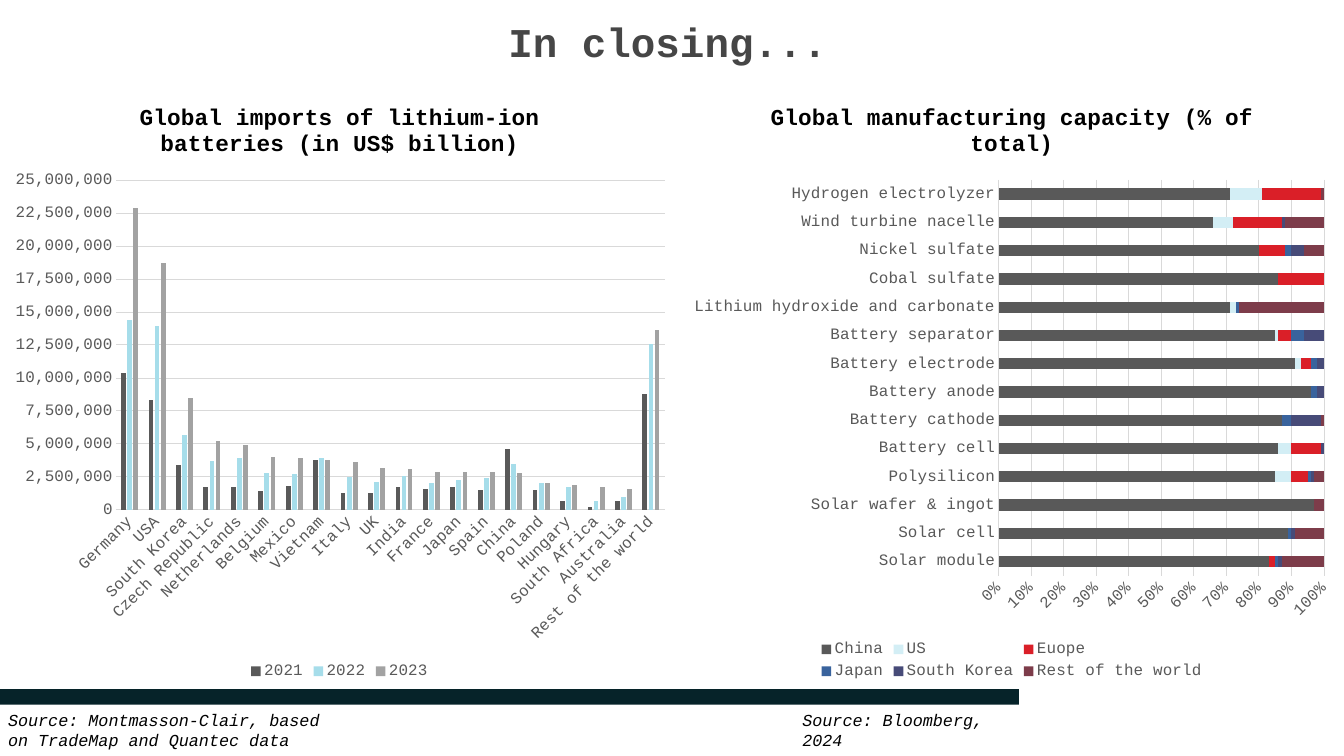
from lxml import etree
from pptx import Presentation, util as u
from pptx.chart.data import CategoryChartData
from pptx.dml.color import RGBColor
from pptx.enum import chart as ch, shapes, text
from pptx.oxml.ns import qn

IMPORT_COUNTRIES = [
    "Germany", "USA", "South Korea", "Czech Republic", "Netherlands", "Belgium",
    "Mexico", "Vietnam", "Italy", "UK", "India", "France", "Japan", "Spain", "China",
    "Poland", "Hungary", "South Africa", "Australia", "Rest of the world"]
# Imports in units of 100,000
IMPORTS = {
    "2021": ("595959", [104, 83, 34, 17, 17, 14, 18, 38, 13, 13,
                        17, 16, 17, 15, 46, 15, 7, 2, 7, 88]),
    "2022": ("A6DDEA", [144, 139, 57, 37, 39, 28, 27, 39, 25, 21,
                        26, 20, 23, 24, 35, 20, 17, 7, 10, 126]),
    "2023": ("A2A2A2", [229, 187, 85, 52, 49, 40, 39, 38, 36, 32,
                        31, 29, 29, 29, 28, 20, 19, 17, 16, 136]),
}
PRODUCTS = [
    "Solar module", "Solar cell", "Solar wafer & ingot", "Polysilicon", "Battery cell",
    "Battery cathode", "Battery anode", "Battery electrode", "Battery separator",
    "Lithium hydroxide and carbonate", "Cobal sulfate", "Nickel sulfate",
    "Wind turbine nacelle", "Hydrogen electrolyzer"]
NA = None
CAPACITY = {
    "China": ("595959", [83, 89, 97, 85, 86, 87, 96, 91, 85, 71, 86, 80, 66, 71]),
    "US": ("D3EEF5", [NA, NA, NA, 5, 4, NA, NA, 2, 1, 2, NA, NA, 6, 10]),
    "Euope": ("DA1F28", [2, NA, NA, 5, 9, NA, NA, 3, 4, NA, 14, 8, 15, 18]),
    "Japan": ("39639D", [1, 1, NA, 1, NA, 3, 2, 2, 4, 1, NA, 2, NA, NA]),
    "South Korea": ("474B78", [1, 1, NA, 1, 1, 9, 2, 2, 6, NA, NA, 4, 1, NA]),
    "Rest of the world": ("7D3C4A", [13, 9, 3, 3, NA, 1, NA, NA, NA, 26, NA, 6, 12, 1]),
}


def rgb(value):
    return RGBColor.from_string(value)


def set_all(target, values):
    for name, value in values.items():
        setattr(target, name, value)


class ClosingSlide:
    face = "Courier New"
    label_color, rule_color = "595959", "D9D9D9"

    def __init__(self, slide):
        self.slide = slide

    def style(self, font, size, color, **extra):
        set_all(font, {"name": self.face, "size": u.Pt(size), **extra})
        font.color.rgb = rgb(color)

    def band(self, box, color):
        band = self.slide.shapes.add_shape(shapes.MSO_SHAPE.RECTANGLE, *map(u.Pt, box))
        band.shadow.inherit = False
        band.fill.solid()
        band.fill.fore_color.rgb = rgb(color)
        band.line.fill.background()

    def words(self, box, content, size, color, align=text.PP_ALIGN.LEFT,
              anchor=text.MSO_ANCHOR.TOP, **extra):
        frame = self.slide.shapes.add_textbox(*map(u.Pt, box)).text_frame
        set_all(frame, {"word_wrap": True, "vertical_anchor": anchor})
        line = frame.paragraphs[0]
        line.text, line.alignment = content, align
        self.style(line.runs[0].font, size, color, **extra)

    def rule(self, line):
        line.color.rgb = rgb(self.rule_color)
        line.width = u.Pt(0.75)

    def axis(self, axis, slanted):
        set_all(axis, {"major_tick_mark": ch.XL_TICK_MARK.NONE,
                       "minor_tick_mark": ch.XL_TICK_MARK.NONE})
        self.style(axis.tick_labels.font, 14, self.label_color)
        if slanted:
            body = axis._element.find(qn("c:txPr")).find(qn("a:bodyPr"))
            body.set("rot", "-2700000")

    def place_plot(self, chart, area):
        """Fix the inner plot area as fractions (x, y, w, h) of the chart."""
        plot_area = chart._chartSpace.chart.plotArea
        for old in plot_area.findall(qn("c:layout")):
            plot_area.remove(old)
        layout = etree.Element(qn("c:layout"))
        plot_area.insert(0, layout)
        manual = etree.SubElement(layout, qn("c:manualLayout"))
        settings = [("layoutTarget", "inner"), ("xMode", "edge"), ("yMode", "edge")]
        for tag, value in settings + list(zip("xywh", area)):
            etree.SubElement(manual, qn(f"c:{tag}")).set("val", str(value))

    def chart(self, box, kind, title, categories, series, area, plot_format,
              scale, number_format, slant_values=False, unit=1):
        data = CategoryChartData()
        data.categories = categories
        for name, (_, values) in series.items():
            data.add_series(name, [v if v is None else v * unit for v in values])
        chart = self.slide.shapes.add_chart(kind, *map(u.Pt, box), data).chart
        self.style(chart.font, 14, "000000")

        chart.has_title = True
        heading = chart.chart_title.text_frame
        heading.text = title
        self.style(heading.paragraphs[0].runs[0].font, 20, "000000", bold=True)
        chart.chart_title.include_in_layout = False

        chart.has_legend = True
        set_all(chart.legend, {"position": ch.XL_LEGEND_POSITION.BOTTOM,
                               "include_in_layout": False})
        self.style(chart.legend.font, 14, self.label_color)

        plot = chart.plots[0]
        set_all(plot, {"vary_by_categories": False, **plot_format})
        for bars, (color, _) in zip(plot.series, series.values()):
            bars.format.fill.solid()
            bars.format.fill.fore_color.rgb = rgb(color)
            bars.format.line.fill.background()
            bars.invert_if_negative = False

        self.axis(chart.category_axis, not slant_values)
        self.rule(chart.category_axis.format.line)
        values = chart.value_axis
        self.axis(values, slant_values)
        values.format.line.fill.background()
        set_all(values, {"has_major_gridlines": True, **scale})
        self.rule(values.major_gridlines.format.line)
        set_all(values.tick_labels, {"number_format": number_format,
                                     "number_format_is_linked": False})
        self.place_plot(chart, area)


def main():
    deck = Presentation()
    set_all(deck, {"slide_width": u.Pt(1184.4), "slide_height": u.Pt(666)})
    closing = ClosingSlide(deck.slides.add_slide(deck.slide_layouts[6]))

    closing.band((0, 607, 898, 13.7), "062329")
    closing.words((0, -2, 1177, 76), "In closing...", 36, "464646",
                  text.PP_ALIGN.CENTER, text.MSO_ANCHOR.MIDDLE, bold=True)
    closing.chart((0.7, 74, 597, 528.5), ch.XL_CHART_TYPE.COLUMN_CLUSTERED,
                  "Global imports of lithium-ion batteries (in US$ billion)",
                  IMPORT_COUNTRIES, IMPORTS, (0.17, 0.16, 0.81, 0.55),
                  {"gap_width": 219, "overlap": -27},
                  {"minimum_scale": 0, "maximum_scale": 25000000, "major_unit": 2500000},
                  "#,##0", unit=100000)
    closing.chart((599, 74, 585.4, 528.5), ch.XL_CHART_TYPE.BAR_STACKED_100,
                  "Global manufacturing capacity (% of total)",
                  PRODUCTS, CAPACITY, (0.48, 0.16, 0.49, 0.66),
                  {"gap_width": 150, "overlap": 100},
                  {"major_unit": 0.1}, "0%", slant_values=True)
    for left, width, source in (
            (0, 298, "Source: Montmasson-Clair, based on TradeMap and Quantec data"),
            (700, 210, "Source: Bloomberg, 2024")):
        closing.words((left, 621.4, width, 43), source, 14.8, "000000", italic=True)

    deck.save("out.pptx")


if __name__ == "__main__":
    main()
